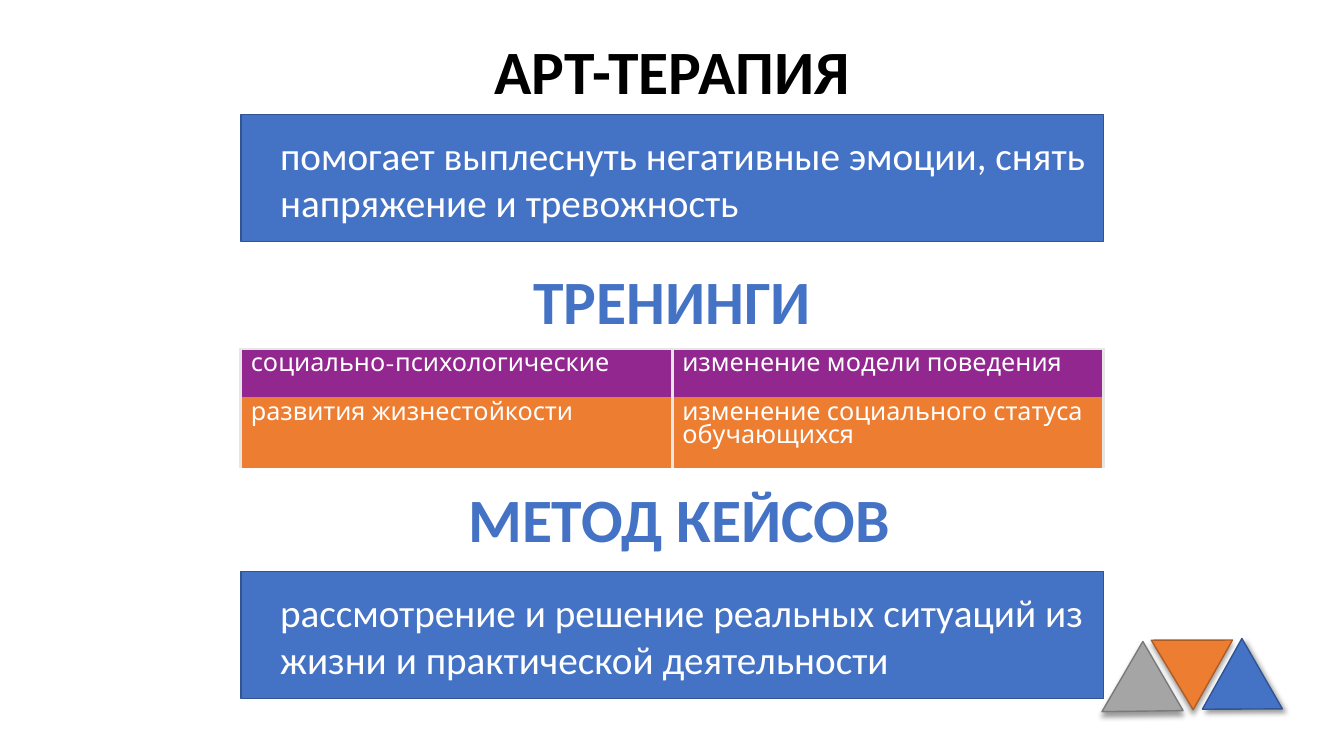
from dataclasses import dataclass

from lxml.etree import SubElement
from pptx import Presentation
from pptx.dml.color import RGBColor
from pptx.enum.shapes import MSO_SHAPE
from pptx.enum.text import MSO_ANCHOR, PP_ALIGN
from pptx.oxml.ns import qn
from pptx.util import Pt


@dataclass(frozen=True)
class Theme:
    black: str = "000000"
    white: str = "FFFFFF"
    blue: str = "4472C4"
    blue_edge: str = "325491"
    orange: str = "ED7D31"
    orange_edge: str = "AF5C24"
    gray: str = "A5A5A5"
    gray_edge: str = "7A7A7A"
    purple: str = "92278F"
    border: str = "E7E6E6"
    main_font: str = "Calibri"
    table_font: str = "League Spartan"
    heading_size: float = 44
    body_size: float = 28
    table_size: float = 18


def points(*lengths):
    return [Pt(length) for length in lengths]


def set_values(target, values):
    for attribute, value in values.items():
        setattr(target, attribute, value)


class SlideBuilder:
    def __init__(self, slide, theme):
        self.slide = slide
        self.theme = theme

    def fill_text(self, frame, text, color, font, layout=None, indent=0):
        set_values(frame, {"word_wrap": True, "text": text})
        paragraph = frame.paragraphs[0]
        set_values(paragraph, layout or {})
        if indent:
            paragraph._p.get_or_add_pPr().set("marL", str(Pt(indent)))
        run_font = paragraph.runs[0].font
        set_values(run_font, font)
        run_font.color.rgb = RGBColor.from_string(color)

    def heading(self, text, left, top, color, holder=None):
        box = points(left, top, 777.6, 106.6)
        holder = holder or self.slide.shapes.add_textbox(*box)
        set_values(holder, dict(zip(("left", "top", "width", "height"), box)))
        holder.text_frame.vertical_anchor = MSO_ANCHOR.MIDDLE
        self.fill_text(
            holder.text_frame, text, color,
            {"name": self.theme.main_font, "size": Pt(self.theme.heading_size), "bold": True},
            {"alignment": PP_ALIGN.CENTER, "line_spacing": 0.9},
        )

    def paint(self, shape, fill, edge):
        shape.shadow.inherit = False
        shape.fill.solid()
        shape.fill.fore_color.rgb = RGBColor.from_string(fill)
        shape.line.color.rgb = RGBColor.from_string(edge)
        shape.line.width = Pt(1)

    def panel(self, text, left, top, width, height):
        panel = self.slide.shapes.add_shape(
            MSO_SHAPE.RECTANGLE, *points(left, top, width, height))
        self.paint(panel, self.theme.blue, self.theme.blue_edge)
        panel.text_frame.vertical_anchor = MSO_ANCHOR.MIDDLE
        self.fill_text(
            panel.text_frame, text, self.theme.white,
            {"name": self.theme.main_font, "size": Pt(self.theme.body_size)},
            {"alignment": PP_ALIGN.LEFT}, indent=21,
        )

    def cell_borders(self, cell, sides):
        """Draw the given sides (of L, R, T, B) and clear the others."""
        properties = cell._tc.get_or_add_tcPr()
        for side in "LRTB":
            line = SubElement(properties, qn(f"a:ln{side}"), w=str(Pt(2.25)))
            if side in sides:
                fill = SubElement(line, qn("a:solidFill"))
                SubElement(fill, qn("a:srgbClr"), val=self.theme.border)
            else:
                SubElement(line, qn("a:noFill"))

    def table(self, rows, left, top, width, heights, fills):
        columns = len(rows[0])
        table = self.slide.shapes.add_table(
            len(rows), columns, *points(left, top, width, sum(heights))).table
        set_values(table, {"first_row": False, "horz_banding": False})
        for column in table.columns:
            column.width = Pt(width / columns)
        for index, (texts, height, fill) in enumerate(zip(rows, heights, fills)):
            table.rows[index].height = Pt(height)
            for cell, text in zip(table.rows[index].cells, texts):
                self.cell_borders(cell, "LR" if index else "LRT")
                cell.fill.solid()
                cell.fill.fore_color.rgb = RGBColor.from_string(fill)
                self.fill_text(
                    cell.text_frame, text, self.theme.white,
                    {"name": self.theme.table_font, "size": Pt(self.theme.table_size)},
                )

    def drop_shadow(self, shape, direction):
        effects = shape._element.spPr.find(qn("a:effectLst"))
        shadow = SubElement(
            effects, qn("a:outerShdw"), blurRad=str(Pt(4)), dist=str(Pt(3)),
            dir=str(direction * 60000), algn="t", rotWithShape="0")
        color = SubElement(shadow, qn("a:srgbClr"), val=self.theme.black)
        SubElement(color, qn("a:alpha"), val="40000")

    def triangles(self, pieces):
        group = self.slide.shapes.add_group_shape()
        for left, top, rotation, fill, edge, direction in pieces:
            triangle = group.shapes.add_shape(
                MSO_SHAPE.ISOSCELES_TRIANGLE, *points(left, top, 58, 49.7))
            triangle.rotation = rotation
            triangle.adjustments[0] = 0.487
            self.paint(triangle, fill, edge)
            self.drop_shadow(triangle, direction)


def main():
    presentation = Presentation()
    set_values(presentation, {"slide_width": Pt(960), "slide_height": Pt(540)})
    slide = presentation.slides.add_slide(presentation.slide_layouts[5])
    theme = Theme()
    builder = SlideBuilder(slide, theme)
    left, width, panel_height = 172, 616.4, 90.7

    builder.heading("АРТ-ТЕРАПИЯ", 91.4, 0, theme.black, slide.shapes.title)
    builder.panel("помогает выплеснуть негативные эмоции, снять напряжение и тревожность",
                  left, 82, width, panel_height)
    builder.heading("ТРЕНИНГИ", 91.4, 164.2, theme.blue)
    builder.table(
        [("социально-психологические", "изменение модели поведения"),
         ("развития жизнестойкости", "изменение социального статуса обучающихся")],
        left, 249.3, width, (34.5, 49), (theme.purple, theme.orange),
    )
    builder.heading("МЕТОД КЕЙСОВ ", 101.5, 319.7, theme.blue)
    builder.panel("рассмотрение и решение реальных ситуаций из жизни и практической деятельности",
                  left, 408.2, width, panel_height)
    builder.triangles([
        (851, 468.7, 240.1, theme.blue, theme.blue_edge, 45),
        (822.4, 457.2, 179.9, theme.orange, theme.orange_edge, 90),
        (794.2, 470.9, 120.2, theme.gray, theme.gray_edge, 90),
    ])
    presentation.save("out.pptx")


if __name__ == "__main__":
    main()
